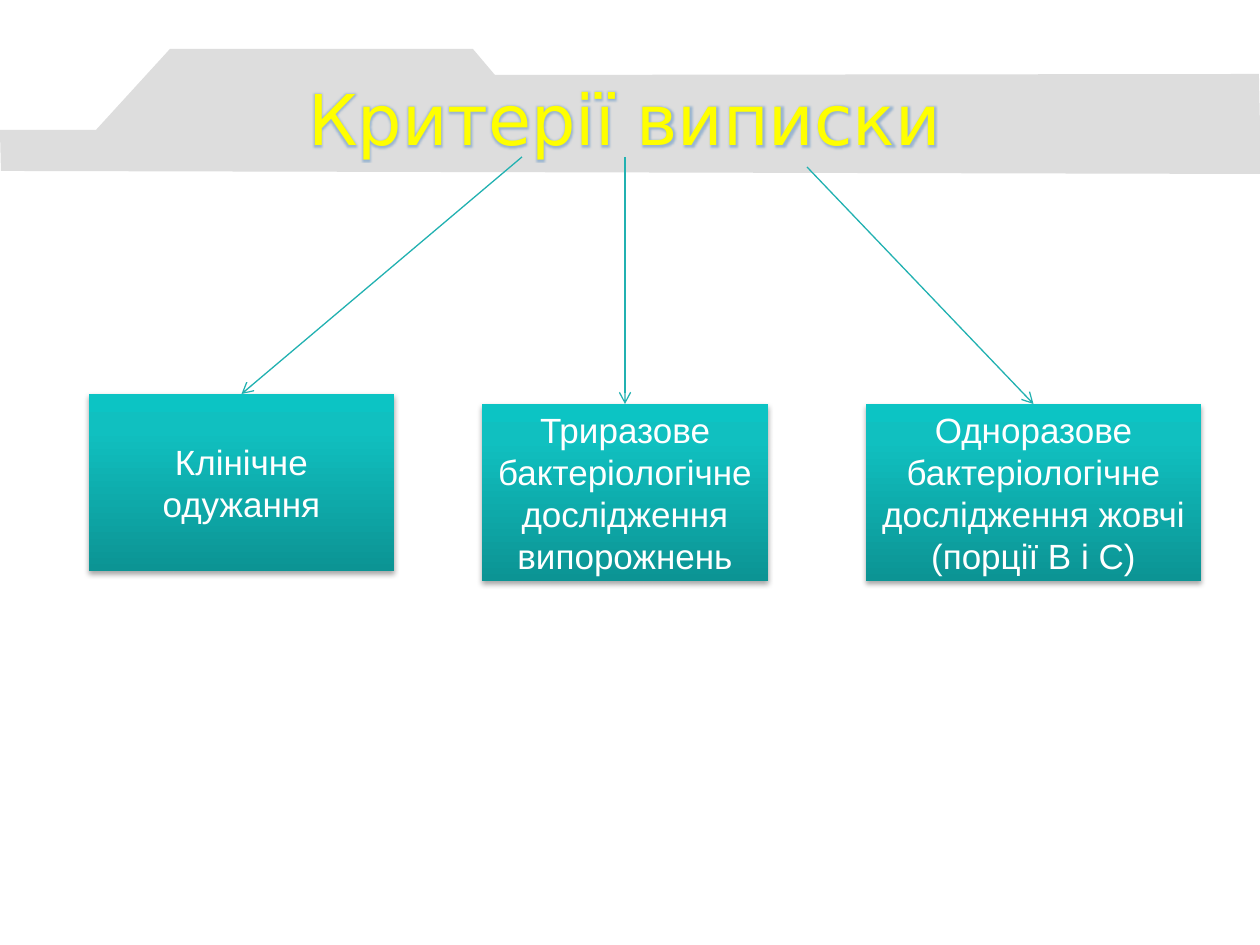
"""Build a slide with three discharge criteria branching from a title."""
from copy import deepcopy

from lxml import etree
from pptx import Presentation
from pptx.dml.color import RGBColor
from pptx.enum.shapes import MSO_CONNECTOR, MSO_SHAPE
from pptx.enum.text import MSO_ANCHOR, MSO_AUTO_SIZE, PP_ALIGN
from pptx.oxml import parse_xml
from pptx.oxml.ns import qn
from pptx.util import Emu, Pt

RECTANGLE = MSO_SHAPE.RECTANGLE
STRAIGHT = MSO_CONNECTOR.STRAIGHT
MIDDLE = MSO_ANCHOR.MIDDLE
CENTER = PP_ALIGN.CENTER
NO_AUTOFIT = MSO_AUTO_SIZE.NONE
PX = 914400 / 126
NAMESPACE = 'xmlns:a="http://schemas.openxmlformats.org/drawingml/2006/main"'
COLORS = {
    "band": "DDDDDD",
    "title": "FFFF00",
    "outline": "FFFFFF",
    "glow": "6E9BC8",
    "box text": "FFFFFF",
    "box dark": "0C9494",
    "box middle": "10C0C0",
    "box light": "0CC4C4",
    "arrow": "21B1B1",
    "shadow": "000000",
}
BOX_STOPS = [("box dark", 0), ("box middle", 0.8), ("box light", 1)]
TITLE_FORMAT = {"name": "DejaVu Sans", "size": Pt(40), "bold": False}
BOX_FORMAT = {"name": "Arial", "size": Pt(20), "bold": False}
BAND_POINTS = [(96, 130), (170, 49), (473, 49), (495, 75), (1259, 74), (1261, 174), (1, 171)]
BOX_HEIGHT = 177
CRITERIA = [
    ("Клінічне одужання", 89, 394, 305, (522, 157)),
    ("Триразове бактеріологічне дослідження випорожнень", 482, 404, 286, (625, 157)),
    ("Одноразове бактеріологічне дослідження жовчі (порції В і С)", 866, 404, 335, (807, 167)),
]


def px(*lengths):
    return [Emu(round(length * PX)) for length in lengths]


def write_text(shape, text, font_format, color):
    frame = shape.text_frame
    frame.text = text
    frame.word_wrap = True
    frame.auto_size = NO_AUTOFIT
    frame.vertical_anchor = MIDDLE
    paragraph = frame.paragraphs[0]
    paragraph.alignment = CENTER
    font = paragraph.runs[0].font
    for name, value in font_format.items():
        setattr(font, name, value)
    font.color.rgb = RGBColor.from_string(COLORS[color])
    return paragraph.runs[0]


presentation = Presentation()
presentation.slide_width, presentation.slide_height = px(1260, 945)
slide = presentation.slides.add_slide(presentation.slide_layouts[5])
shapes = slide.shapes

builder = shapes.build_freeform(0, 130, scale=PX)
builder.add_line_segments(BAND_POINTS, close=True)
band = builder.convert_to_shape()
band.shadow.inherit = False
band.fill.solid()
band.fill.fore_color.rgb = RGBColor.from_string(COLORS["band"])
band.line.fill.background()

title = shapes.title
title.left, title.top, title.width, title.height = px(84, 79, 1081, 78)
title_run = write_text(title, "Критерії виписки", TITLE_FORMAT, "title")
title._element.addprevious(band._element)
run_properties = title_run._r.rPr
run_properties.insert(0, parse_xml(
    f'<a:ln {NAMESPACE} w="18415"><a:solidFill><a:srgbClr val="{COLORS["outline"]}"/>'
    '</a:solidFill></a:ln>'))
run_properties.find(qn("a:solidFill")).addnext(parse_xml(
    f'<a:effectLst {NAMESPACE}><a:glow rad="38100"><a:srgbClr val="{COLORS["glow"]}">'
    '<a:alpha val="60000"/></a:srgbClr></a:glow></a:effectLst>'))

boxes = []
for text, left, top, width, start in CRITERIA:
    box = shapes.add_shape(RECTANGLE, *px(left, top, width, BOX_HEIGHT))
    box.line.fill.background()
    box.fill.gradient()
    box.fill.gradient_angle = 90
    stop_list = box._element.spPr.find(".//" + qn("a:gsLst"))
    stop_list.append(deepcopy(stop_list[-1]))
    for stop, (color, position) in zip(box.fill.gradient_stops, BOX_STOPS):
        stop.color.rgb = RGBColor.from_string(COLORS[color])
        stop.position = position
    box.shadow.inherit = False
    box._element.spPr.find(qn("a:effectLst")).append(parse_xml(
        f'<a:outerShdw {NAMESPACE} blurRad="40000" dist="23000" dir="5400000" rotWithShape="0">'
        f'<a:srgbClr val="{COLORS["shadow"]}"><a:alpha val="35000"/></a:srgbClr></a:outerShdw>'))
    write_text(box, text, BOX_FORMAT, "box text")
    boxes.append((box, start))

for box, start in boxes:
    arrow = shapes.add_connector(STRAIGHT, *px(*start), *px(*start))
    arrow.end_connect(box, 0)
    arrow.line.color.rgb = RGBColor.from_string(COLORS["arrow"])
    arrow.line.width = Pt(0.75)
    properties = arrow._element.spPr
    etree.SubElement(properties.find(qn("a:ln")), qn("a:tailEnd"), type="arrow")
    etree.SubElement(properties, qn("a:effectLst"))

presentation.save("out.pptx")
